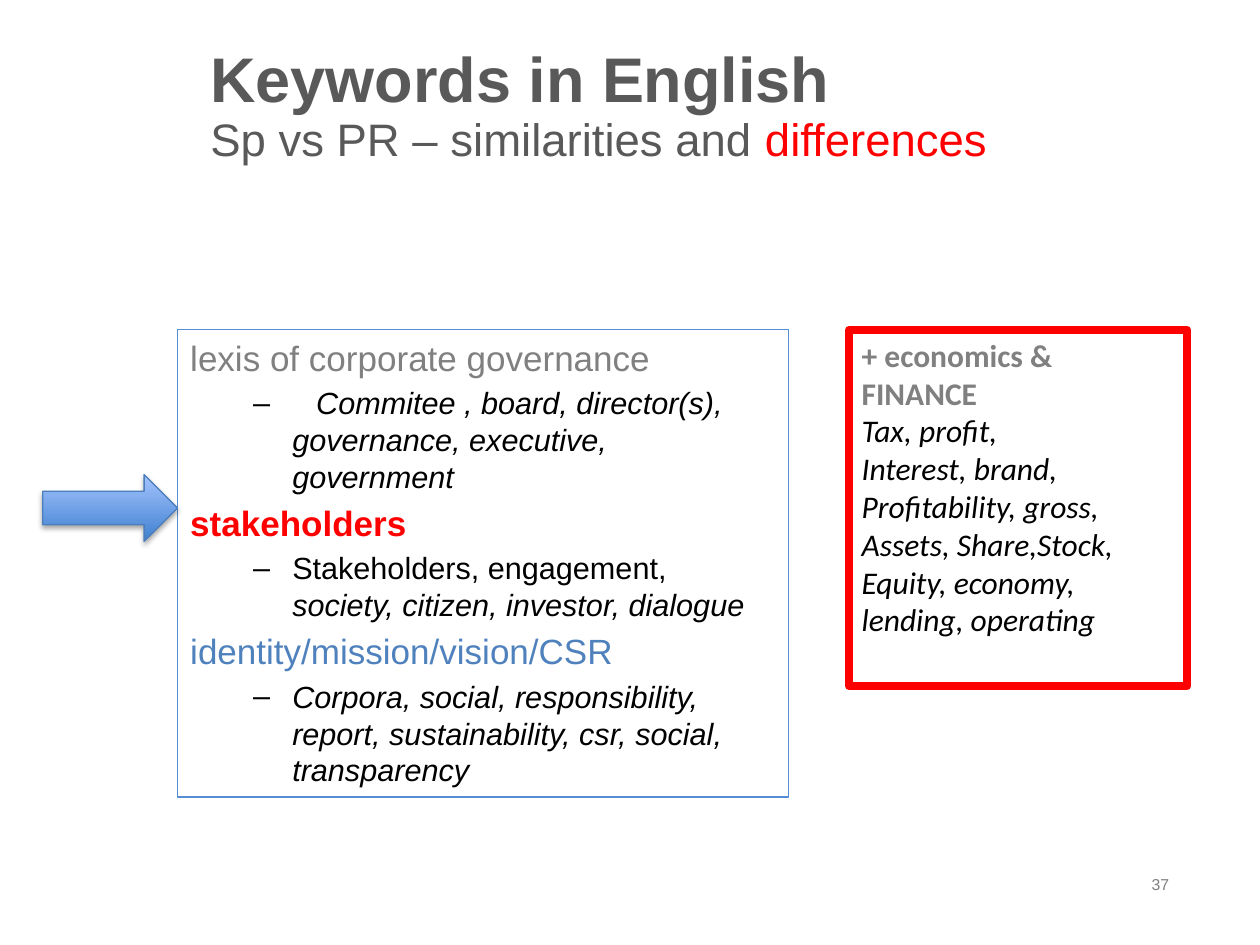
from lxml import etree
from pptx import Presentation
from pptx.dml.color import RGBColor
from pptx.enum.shapes import MSO_SHAPE
from pptx.enum.text import MSO_ANCHOR, MSO_AUTO_SIZE, PP_ALIGN
from pptx.oxml import parse_xml
from pptx.oxml.ns import qn
from pptx.util import Pt

TOP, MIDDLE = MSO_ANCHOR.TOP, MSO_ANCHOR.MIDDLE
LEFT, JUSTIFY = PP_ALIGN.LEFT, PP_ALIGN.JUSTIFY
BLACK = RGBColor(0x00, 0x00, 0x00)
DARK_GRAY = RGBColor(0x59, 0x59, 0x59)
GRAY = RGBColor(0x80, 0x80, 0x80)
RED = RGBColor(0xFF, 0x00, 0x00)
BLUE = RGBColor(0x4F, 0x81, 0xBD)
FRAME_BLUE = RGBColor(0x55, 0x8E, 0xD5)
ARROW_LINE = RGBColor(0x4B, 0x7E, 0xBC)
ARROW_DARK = RGBColor(0x3F, 0x80, 0xCE)
ARROW_LIGHT = RGBColor(0xA4, 0xC4, 0xFF)

# Left, top, width, height in points
TITLE_BOX = (113, 23.8, 564.5, 40.3)
SUBTITLE_BOX = (113, 66.2, 564.5, 26)
KEYWORD_BOX = (101.5, 188.4, 349.2, 267.1)
FINANCE_BOX = (485.3, 188.4, 193, 203.8)
NUMBER_BOX = (651, 496.5, 33.1, 28.8)
ARROW_BOX = (24.5, 271.2, 77, 38.2)

# Each text run: wording and font values
TITLE = [("Keywords in English", dict(size=36, color=DARK_GRAY, bold=True))]
SUBTITLE_SIZE = 26
SUBTITLE = [
    ("Sp vs PR – similarities and ", dict(size=SUBTITLE_SIZE, color=DARK_GRAY)),
    ("differences", dict(size=SUBTITLE_SIZE, color=RED)),
]
PAGE_NUMBER = [("37", dict(size=9, color=GRAY))]
# Heading, heading format, keyword runs as (wording, italic)
KEYWORD_GROUPS = [
    ("lexis of corporate governance", dict(color=GRAY),
     [("\tCommitee , board, director(s), governance, executive, government", True)]),
    ("stakeholders", dict(color=RED, bold=True),
     [("Stakeholders, engagement, ", False),
      ("society, citizen, investor, dialogue", True)]),
    ("identity/mission/vision/CSR", dict(color=BLUE),
     [("Corpora, social, responsibility, report, sustainability, csr, social, "
       "transparency", True)]),
]
FINANCE_TEXT = dict(size=18, name="Calibri", color=BLACK, italic=True)
FINANCE = [
    [("+ economics & FINANCE", dict(size=18, name="Calibri", color=GRAY, bold=True))],
    [("Tax, profit,", FINANCE_TEXT)],
    [("Interest, brand, Profitability, gross, Assets, Share,Stock, Equity, "
      "economy, lending, operating", FINANCE_TEXT)],
]

HEADING_SIZE, KEYWORD_SIZE = 20, 17.5
KEYWORD_MARGIN, KEYWORD_HANG = 58.3, 22.3
SPACE_BEFORE = 0.2  # share of the text size

SHADOW = (
    '<a:effectLst xmlns:a="http://schemas.openxmlformats.org/drawingml/2006/main">'
    f'<a:outerShdw blurRad="{Pt(3.1)}" dist="{Pt(1.8)}" dir="5400000" rotWithShape="0">'
    '<a:srgbClr val="000000"><a:alpha val="35000"/></a:srgbClr>'
    '</a:outerShdw></a:effectLst>'
)


def place(shape, box):
    shape.left, shape.top, shape.width, shape.height = map(Pt, box)


def set_frame(shape, anchor):
    frame = shape.text_frame
    frame.word_wrap = True
    frame.auto_size = MSO_AUTO_SIZE.NONE
    frame.vertical_anchor = anchor
    return frame


def set_line(shape, color, width):
    shape.line.color.rgb = color
    shape.line.width = Pt(width)


def set_bullet(paragraph, character=None, margin=0, hang=0):
    properties = paragraph._p.get_or_add_pPr()
    properties.set("marL", str(Pt(margin)))
    properties.set("indent", str(-Pt(hang)))
    if character:
        etree.SubElement(properties, qn("a:buFont")).set("typeface", "Arial")
        etree.SubElement(properties, qn("a:buChar")).set("char", character)
    else:
        etree.SubElement(properties, qn("a:buNone"))


def write(paragraph, runs, alignment=LEFT, before=0):
    paragraph.alignment = alignment
    paragraph.space_before = Pt(before)
    for wording, values in runs:
        run = paragraph.add_run()
        run.text = wording
        font_values = {"name": "Arial", "bold": False, "italic": False, **values}
        run.font.color.rgb = font_values.pop("color")
        run.font.size = Pt(font_values.pop("size"))
        for attribute, value in font_values.items():
            setattr(run.font, attribute, value)


def next_paragraph(frame):
    """Return the first paragraph while it is empty, then new ones."""
    first = frame.paragraphs[0]
    return frame.add_paragraph() if first.runs else first


def add_keywords(shape):
    place(shape, KEYWORD_BOX)
    set_line(shape, FRAME_BLUE, 0.75)
    frame = set_frame(shape, TOP)
    for heading, heading_format, keywords in KEYWORD_GROUPS:
        paragraph = next_paragraph(frame)
        write(paragraph, [(heading, dict(heading_format, size=HEADING_SIZE))],
              JUSTIFY, HEADING_SIZE * SPACE_BEFORE)
        set_bullet(paragraph)

        paragraph = next_paragraph(frame)
        paragraph.level = 1
        runs = [(wording, dict(size=KEYWORD_SIZE, color=BLACK, italic=italic))
                for wording, italic in keywords]
        write(paragraph, runs, before=KEYWORD_SIZE * SPACE_BEFORE)
        set_bullet(paragraph, "–", KEYWORD_MARGIN, KEYWORD_HANG)


def add_finance(slide):
    shape = slide.shapes.add_shape(MSO_SHAPE.RECTANGLE, *map(Pt, FINANCE_BOX))
    shape.shadow.inherit = False
    shape.fill.background()
    set_line(shape, RED, 4.5)
    frame = set_frame(shape, TOP)
    for runs in FINANCE:
        write(next_paragraph(frame), runs)


def add_arrow(slide):
    arrow = slide.shapes.add_shape(MSO_SHAPE.RIGHT_ARROW, *map(Pt, ARROW_BOX))
    arrow.fill.gradient()
    arrow.fill.gradient_angle = 90
    for stop, color in zip(arrow.fill.gradient_stops, (ARROW_DARK, ARROW_LIGHT)):
        stop.color.rgb = color
    set_line(arrow, ARROW_LINE, 0.75)
    arrow._element.spPr.append(parse_xml(SHADOW))


def main():
    presentation = Presentation()
    presentation.slide_width, presentation.slide_height = Pt(720), Pt(540)
    slide = presentation.slides.add_slide(presentation.slide_layouts[3])
    title, keywords, subtitle = slide.placeholders

    place(title, TITLE_BOX)
    write(set_frame(title, MIDDLE).paragraphs[0], TITLE)

    add_keywords(keywords)

    place(subtitle, SUBTITLE_BOX)
    paragraph = set_frame(subtitle, MIDDLE).paragraphs[0]
    write(paragraph, SUBTITLE, before=SUBTITLE_SIZE * SPACE_BEFORE)
    set_bullet(paragraph)

    number = slide.shapes.add_textbox(*map(Pt, NUMBER_BOX))
    write(set_frame(number, TOP).paragraphs[0], PAGE_NUMBER)

    add_finance(slide)
    add_arrow(slide)
    presentation.save("out.pptx")


if __name__ == "__main__":
    main()
